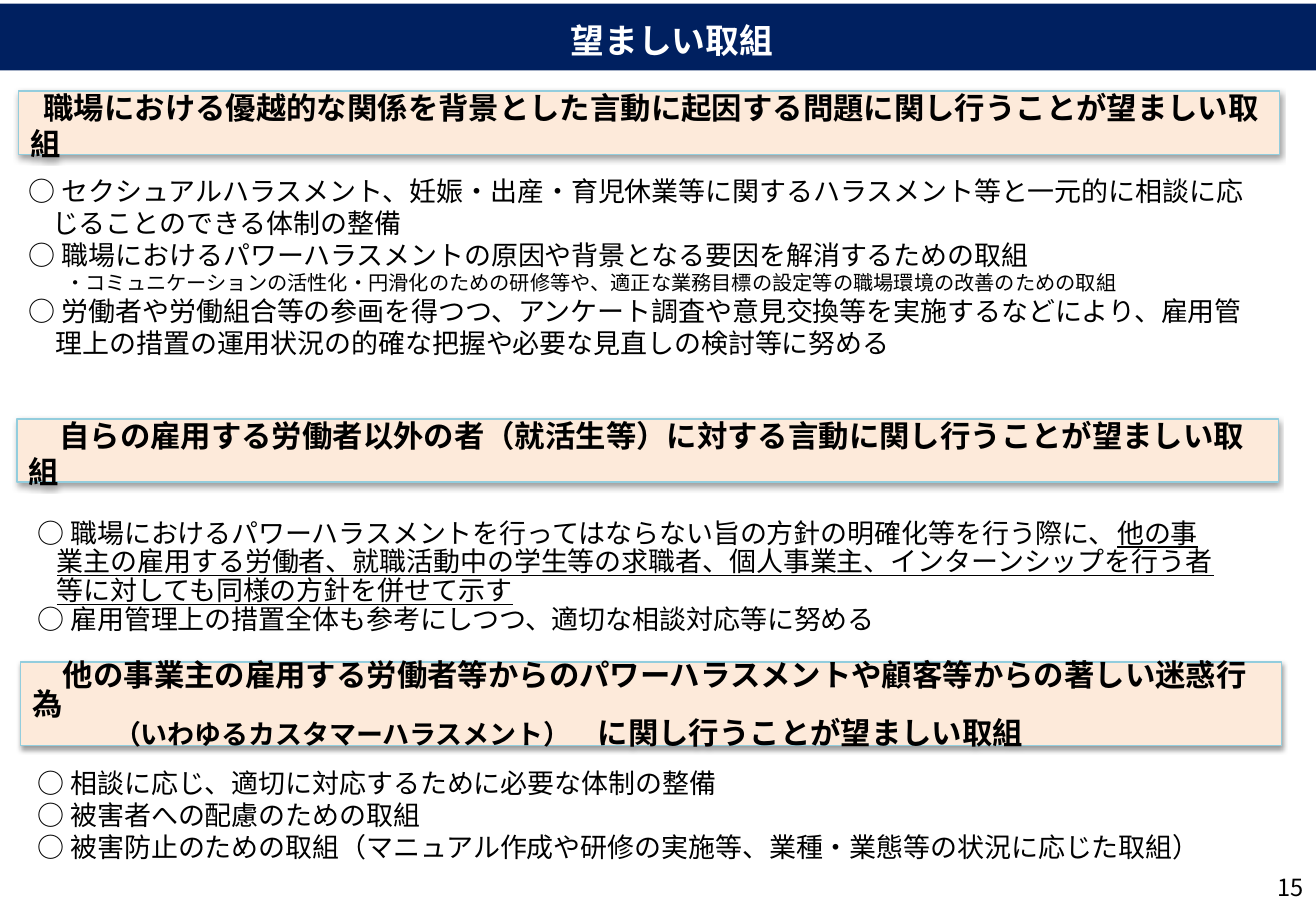
from lxml import etree
from pptx import Presentation, util as u
from pptx.dml.color import RGBColor
from pptx.enum import shapes, text
from pptx.oxml.ns import qn

NAVY = RGBColor(0x00, 0x20, 0x60)
PEACH = RGBColor(0xFD, 0xEA, 0xDA)
SKY = RGBColor(0x93, 0xCD, 0xDD)
BLACK = RGBColor(0, 0, 0)
WHITE = RGBColor(255, 255, 255)

WIDTH, HEIGHT = u.Inches(10.83), u.Inches(7.5)
GOTHIC = "Noto Sans CJK JP"
LATIN = "Calibri"


def share(left, top, width, height):
    sizes = (WIDTH, HEIGHT, WIDTH, HEIGHT)
    return [int(size * part / 100) for size, part in zip(sizes, (left, top, width, height))]


def set_frame(tf, anchor, insets=(0.1, 0.05, 0.1, 0.05)):
    sides = ("margin_left", "margin_top", "margin_right", "margin_bottom")
    values = dict(zip(sides, map(u.Inches, insets)))
    values.update(word_wrap=True, vertical_anchor=anchor)
    for name, value in values.items():
        setattr(tf, name, value)


def add_run(p, words, color=BLACK, face=GOTHIC, **font):
    r = p.add_run()
    r.text = words
    r.font.color.rgb = color
    for name, value in {"name": face, **font}.items():
        setattr(r.font, name, value)
    etree.SubElement(r.font._element, qn("a:ea")).set("typeface", GOTHIC)


def add_paragraph(tf, runs, align=text.PP_ALIGN.LEFT, spacing=None, margin=0, indent=0):
    p = tf.paragraphs[0]
    if p.runs:
        p = tf.add_paragraph()
    p.alignment = align
    if spacing:
        p.line_spacing = u.Pt(spacing)
    for name, value in {"marL": margin, "indent": indent}.items():
        p._p.get_or_add_pPr().set(name, str(u.Inches(value)))
    for words, font in runs:
        add_run(p, words, **font)
    return p


def add_box(s, area, fill):
    sp = s.shapes.add_shape(shapes.MSO_SHAPE.RECTANGLE, *share(*area))
    sp.shadow.inherit = False
    sp.fill.solid()
    sp.fill.fore_color.rgb = fill
    sp.line.fill.background()
    return sp


def add_shadow(sp):
    effects = sp._element.spPr.find(qn("a:effectLst"))
    shadow = etree.SubElement(effects, qn("a:outerShdw"))
    for name, value in {"blurRad": u.Pt(3.1), "dist": u.Pt(1.6), "dir": 5400000, "rotWithShape": 0}.items():
        shadow.set(name, str(value))
    color = etree.SubElement(shadow, qn("a:srgbClr"), val=str(BLACK))
    etree.SubElement(color, qn("a:alpha"), val="38000")


def add_title(s, words):
    sp = add_box(s, (0, 0.4, 100, 7.33), NAVY)
    set_frame(sp.text_frame, text.MSO_ANCHOR.MIDDLE, (0.32, 0.05, 0.09, 0.05))
    font = {"size": u.Pt(20), "bold": True, "color": WHITE}
    p = add_paragraph(sp.text_frame, [(words, font)], text.PP_ALIGN.CENTER, 27.7)
    p.space_before = u.Pt(27.7)


def add_heading(s, area, spacing, lines):
    sp = add_box(s, area, PEACH)
    sp.line.color.rgb = SKY
    sp.line.width = u.Pt(0.75)
    add_shadow(sp)
    set_frame(sp.text_frame, text.MSO_ANCHOR.MIDDLE, (0.1, 0.1, 0.1, 0.05))
    for indent, parts in lines:
        runs = [(words, {"size": u.Pt(size), "bold": True, "face": LATIN}) for words, size in parts]
        add_paragraph(sp.text_frame, runs, spacing=spacing, indent=indent)


def add_body(s, area, items):
    tf = s.shapes.add_textbox(*share(*area)).text_frame
    set_frame(tf, text.MSO_ANCHOR.TOP)
    for parts, size, spacing, margin, indent in items:
        runs = [(words, {"size": u.Pt(size), "underline": underline}) for words, underline in parts]
        add_paragraph(tf, runs, spacing=spacing, margin=margin, indent=indent)


def plain(words, size=16, spacing=19, margin=0, indent=0):
    return [(words, False)], size, spacing, margin, indent


def add_page_number(s, number):
    tf = s.shapes.add_textbox(*share(92.7, 94.67, 7.3, 5.33)).text_frame
    set_frame(tf, text.MSO_ANCHOR.MIDDLE)
    add_paragraph(tf, [(number, {"size": u.Pt(14)})], text.PP_ALIGN.RIGHT)


def main():
    prs = Presentation()
    prs.slide_width, prs.slide_height = WIDTH, HEIGHT
    s = prs.slides.add_slide(prs.slide_layouts[6])

    add_title(s, "望ましい取組")

    add_heading(s, (1.39, 10, 95.84, 6.93), 21.4, [
        (0.11, [("職場における優越的な関係を背景とした言動に起因する問題に関し行うことが望ましい取組", 18)]),
    ])
    add_body(s, (1.29, 18.53, 95.84, 22), [
        plain("○ セクシュアルハラスメント、妊娠・出産・育児休業等に関するハラスメント等と一元的に相談に応じることのできる体制の整備",
              margin=0.19, indent=-0.19),
        plain("○ 職場におけるパワーハラスメントの原因や背景となる要因を解消するための取組"),
        plain("・コミュニケーションの活性化・円滑化のための研修等や、適正な業務目標の設定等の職場環境の改善のための取組",
              size=12, spacing=14.2, margin=0.3),
        plain("○ 労働者や労働組合等の参画を得つつ、アンケート調査や意見交換等を実施するなどにより、雇用管"),
        plain("理上の措置の運用状況の的確な把握や必要な見直しの検討等に努める", margin=0.22),
    ])

    add_heading(s, (1.29, 46, 95.84, 6.93), 21.4, [
        (0.25, [("自らの雇用する労働者以外の者（就活生等）に対する言動に関し行うことが望ましい取組", 18)]),
    ])
    add_body(s, (1.94, 56.4, 91.87, 14), [
        ([("○ 職場におけるパワーハラスメントを行ってはならない旨の方針の明確化等を行う際に、", False),
          ("他の事業主の雇用する労働者、就職活動中の学生等の求職者、個人事業主、インターンシップを行う者等に対しても同様の方針を併せて示す", True)],
         16, 17, 0.16, -0.16),
        plain("○ 雇用管理上の措置全体も参考にしつつ、適切な相談対応等に努める",
              spacing=17, margin=0.16, indent=-0.16),
    ])

    add_heading(s, (1.57, 72.67, 95.84, 9.2), 17, [
        (0.25, [("他の事業主の雇用する労働者等からのパワーハラスメントや顧客等からの著しい迷惑行為", 18)]),
        (0.67, [("（いわゆるカスタマーハラスメント）　", 16), ("に関し行うことが望ましい取組", 18)]),
    ])
    add_body(s, (1.94, 83.47, 96.68, 15.73), [
        plain("○ 相談に応じ、適切に対応するために必要な体制の整備"),
        plain("○ 被害者への配慮のための取組"),
        plain("○ 被害防止のための取組（マニュアル作成や研修の実施等、業種・業態等の状況に応じた取組）"),
    ])

    add_page_number(s, "15")
    prs.save("out.pptx")


if __name__ == "__main__":
    main()
